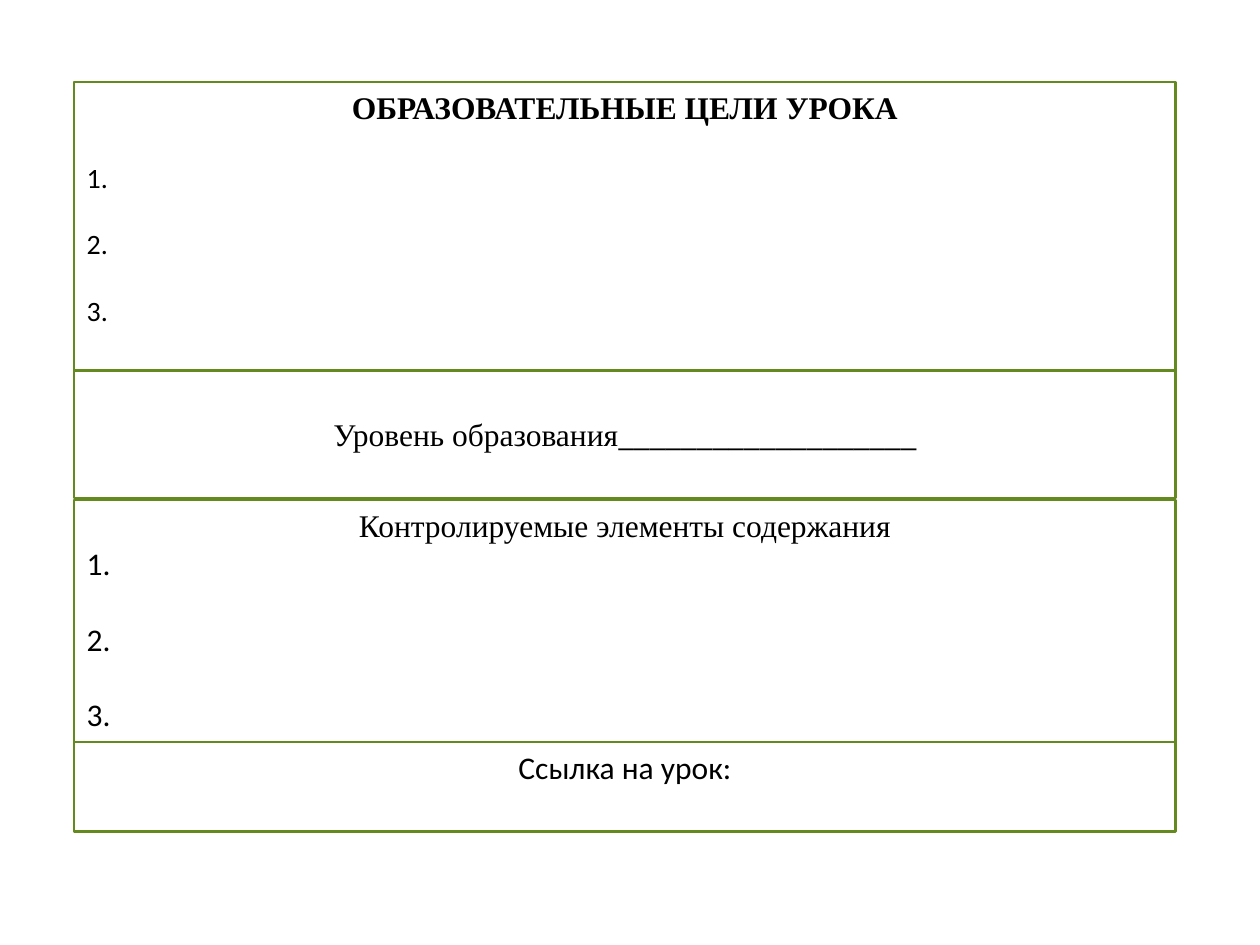
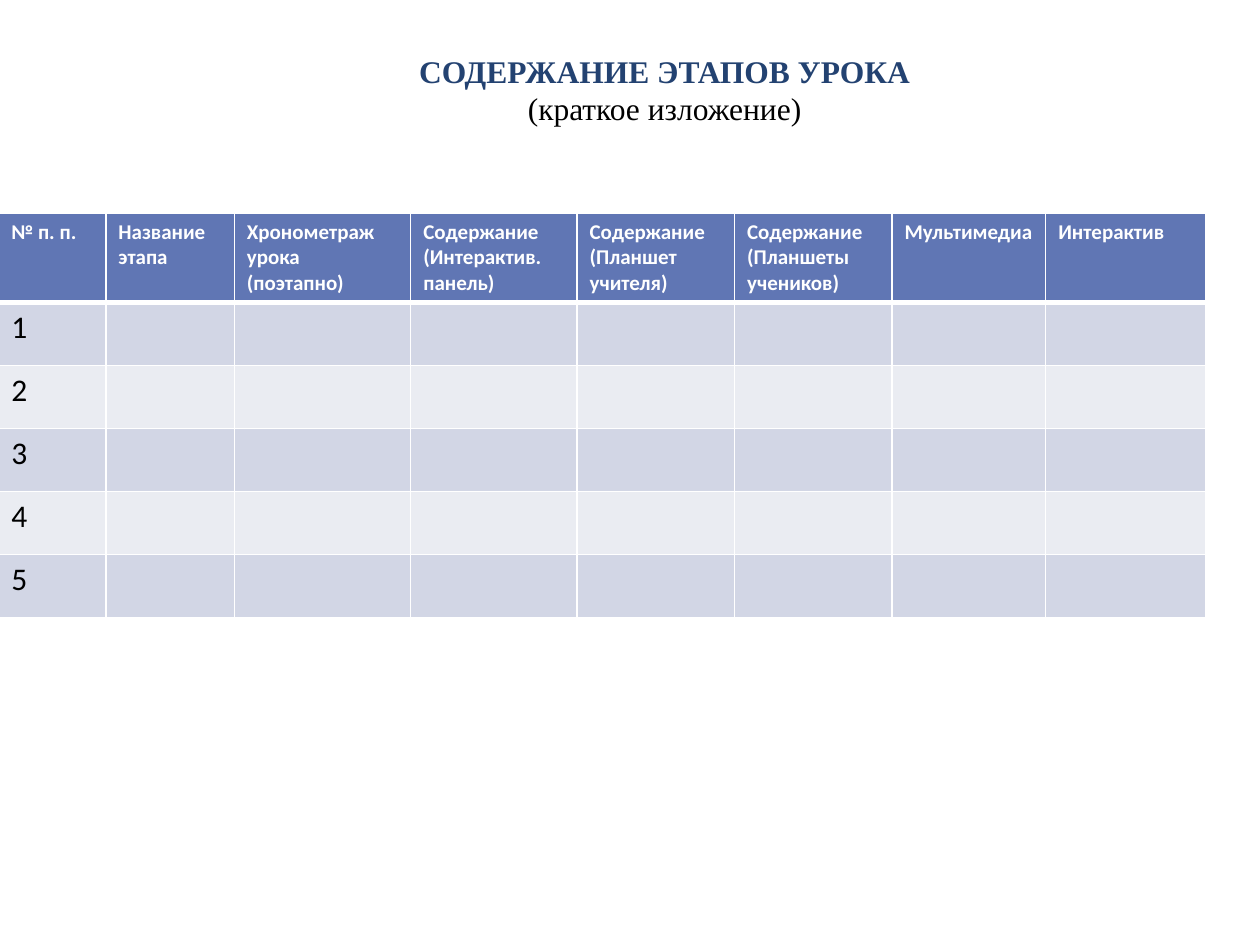
"""Build the lesson goals form and the lesson stages table."""
from lxml.etree import SubElement
from pptx import Presentation
from pptx.dml.color import RGBColor
from pptx.enum.shapes import MSO_SHAPE
from pptx.enum.text import MSO_ANCHOR, MSO_AUTO_SIZE, PP_ALIGN
from pptx.oxml.ns import qn
from pptx.util import Inches, Pt

WHITE = RGBColor(0xFF, 0xFF, 0xFF)
BLACK = RGBColor(0, 0, 0)
GREEN = RGBColor(0x63, 0x89, 0x1F)
NAVY = RGBColor(0x23, 0x42, 0x71)
HEADER_BLUE = RGBColor(0x60, 0x76, 0xB4)
BANDS = [RGBColor(0xD2, 0xD6, 0xE5), RGBColor(0xEA, 0xEC, 0xF2)]

SERIF = {"name": "Times New Roman", "size": Pt(18), "bold": False}
SANS = {"name": "Calibri", "size": Pt(18), "bold": False}
SERIF_BOLD = SERIF | {"bold": True}
SANS_SMALL = SANS | {"size": Pt(16)}
SANS_HEADER = SANS | {"size": Pt(12), "bold": True}


def write_text(frame, paragraphs):
    for index, (alignment, space_before, runs) in enumerate(paragraphs):
        paragraph = frame.paragraphs[0] if index == 0 else frame.add_paragraph()
        paragraph.alignment = alignment
        if index:
            paragraph.space_before = Pt(space_before)
        for text, font_format, color in runs:
            run = paragraph.add_run()
            run.text = text
            for name, value in font_format.items():
                setattr(run.font, name, value)
            run.font.color.rgb = color


def add_titled_slide(left, top, width, height, paragraphs):
    slide = presentation.slides.add_slide(presentation.slide_layouts[5])
    title = slide.shapes.title
    title.left, title.top = Inches(left), Inches(top)
    title.width, title.height = Inches(width), Inches(height)
    frame_format = {"word_wrap": True, "auto_size": MSO_AUTO_SIZE.NONE,
                    "vertical_anchor": MSO_ANCHOR.TOP}
    for name, value in frame_format.items():
        setattr(title.text_frame, name, value)
    write_text(title.text_frame, paragraphs)
    return slide


presentation = Presentation()
presentation.slide_width, presentation.slide_height = Inches(10), Inches(7.5)
center, left_aligned = PP_ALIGN.CENTER, PP_ALIGN.LEFT

form_left, form_top, form_width = 0.59, 0.65, 8.74
goals_slide = add_titled_slide(
    form_left, form_top, form_width, 0.45,
    [(center, 0, [("ОБРАЗОВАТЕЛЬНЫЕ ЦЕЛИ УРОКА", SERIF_BOLD, BLACK)])])

numbers = ["1.", "2.", "3."]
goals = [(left_aligned, 19, [(number, SANS_SMALL, BLACK)]) for number in numbers]
level = [(center, 0, [("Уровень образования", SERIF, BLACK),
                      ("_" * 19, SANS, BLACK)])]
elements = [(center, 0, [("Контролируемые элементы содержания", SERIF, BLACK)])]
elements += [(left_aligned, 21.5 if index else 0, [(number, SANS, BLACK)])
             for index, number in enumerate(numbers)]
link = [(center, 0, [("Ссылка на урок:", SANS, BLACK)])]

form_boxes = [
    (form_top, 2.29, 0.62, MSO_ANCHOR.TOP, goals),
    (2.94, 1.01, 0.05, MSO_ANCHOR.MIDDLE, level),
    (3.97, 1.92, 0.05, MSO_ANCHOR.TOP, elements),
    (5.89, 0.71, 0.05, MSO_ANCHOR.TOP, link),
]
for top, height, inset, anchor, paragraphs in form_boxes:
    box = goals_slide.shapes.add_shape(
        MSO_SHAPE.RECTANGLE, Inches(form_left), Inches(top),
        Inches(form_width), Inches(height))
    box.shadow.inherit = False
    box.fill.solid()
    box.fill.fore_color.rgb = WHITE
    box.line.color.rgb = GREEN
    box.line.width = Pt(1.25)
    frame_format = {"word_wrap": True, "margin_top": Inches(inset),
                    "vertical_anchor": anchor}
    for name, value in frame_format.items():
        setattr(box.text_frame, name, value)
    write_text(box.text_frame, paragraphs)
goals_slide.shapes.element.append(goals_slide.shapes.title.element)

stages_slide = add_titled_slide(
    1.14, 0.36, 8.27, 0.71,
    [(center, 0, [("СОДЕРЖАНИЕ ЭТАПОВ УРОКА", SERIF_BOLD, NAVY)]),
     (center, 0, [("(краткое изложение)", SERIF, BLACK)])])

columns = [
    ("№ п. п.", 0.85),
    ("Название этапа", 1.02),
    ("Хронометраж\nурока (поэтапно)", 1.4),
    ("Содержание\n(Интерактив.\nпанель)", 1.32),
    ("Содержание\n(Планшет учителя)", 1.25),
    ("Содержание (Планшеты учеников)", 1.25),
    ("Мультимедиа", 1.22),
    ("Интерактив", 1.27),
]
row_heights = [0.68] + [0.5] * 5
table = stages_slide.shapes.add_table(
    len(row_heights), len(columns), Inches(-0.01), Inches(1.69),
    Inches(sum(width for _, width in columns)), Inches(sum(row_heights))).table

for column, (_, width) in zip(table.columns, columns):
    column.width = Inches(width)
for row_index, height in enumerate(row_heights):
    table.rows[row_index].height = Inches(height)
    for column_index, (heading, _) in enumerate(columns):
        cell = table.cell(row_index, column_index)
        properties = cell._tc.get_or_add_tcPr()
        for side in "LRTB":
            thick = (row_index, side) in [(0, "B"), (1, "T")]
            border = SubElement(properties, qn(f"a:ln{side}"), w=str(Pt(3 if thick else 1)))
            SubElement(SubElement(border, qn("a:solidFill")), qn("a:srgbClr"), val=str(WHITE))
        cell.fill.solid()
        cell.fill.fore_color.rgb = BANDS[(row_index - 1) % 2] if row_index else HEADER_BLUE
        if row_index == 0:
            write_text(cell.text_frame, [(left_aligned, 0, [(line, SANS_HEADER, WHITE)])
                                         for line in heading.split("\n")])
        elif column_index == 0:
            write_text(cell.text_frame, [(left_aligned, 0, [(str(row_index), SANS, BLACK)])])

presentation.save("out.pptx")
